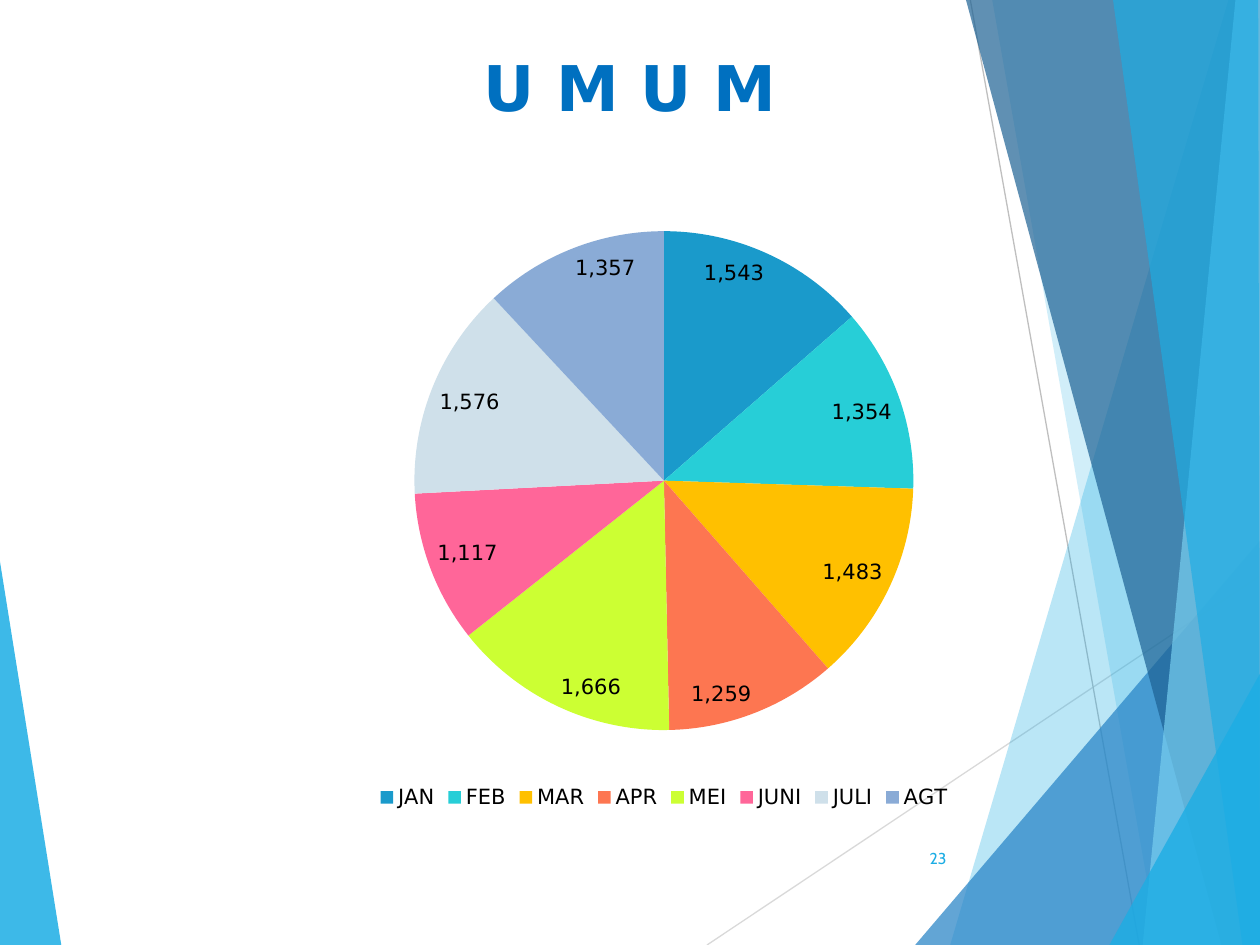
from pptx import Presentation
from pptx.chart.data import CategoryChartData
from pptx.dml.color import RGBColor
from pptx.enum.chart import XL_CHART_TYPE, XL_LABEL_POSITION, XL_LEGEND_POSITION
from pptx.enum.shapes import MSO_CONNECTOR
from pptx.enum.text import MSO_ANCHOR, PP_ALIGN
from pptx.oxml import parse_xml
from pptx.oxml.ns import nsdecls, qn
from pptx.util import Pt
from lxml import etree

WIDE, HIGH = 720, 540
SKY = RGBColor(0x1C, 0xAD, 0xE4)
BLUE = RGBColor(0x26, 0x83, 0xC6)
NAVY = RGBColor(0x1D, 0x62, 0x94)
PALE = RGBColor(0x77, 0xCE, 0xEF)
INK = RGBColor(0x00, 0x70, 0xC0)
BLACK = RGBColor(0, 0, 0)
GREY = RGBColor(0xBF, 0xBF, 0xBF)
SILVER = RGBColor(0xD9, 0xD9, 0xD9)
SLICES = [
    ("JAN", 1543, RGBColor(0x1A, 0x9A, 0xCB)),
    ("FEB", 1354, RGBColor(0x27, 0xCE, 0xD7)),
    ("MAR", 1483, RGBColor(0xFF, 0xC0, 0x00)),
    ("APR", 1259, RGBColor(0xFD, 0x76, 0x51)),
    ("MEI", 1666, RGBColor(0xCC, 0xFF, 0x33)),
    ("JUNI", 1117, RGBColor(0xFF, 0x66, 0x99)),
    ("JULI", 1576, RGBColor(0xCF, 0xE0, 0xEA)),
    ("AGT", 1357, RGBColor(0x8A, 0xAB, 0xD6)),
]


def style(font, name, size, color, bold=False):
    font.name, font.size, font.bold = name, Pt(size), bold
    font.color.rgb = color


deck = Presentation()
deck.slide_width, deck.slide_height = Pt(WIDE), Pt(HIGH)
slide = deck.slides.add_slide(deck.slide_layouts[5])
shapes = slide.shapes

# Thin lines behind the shards
for ends, color in [((404, HIGH, WIDE, 329), SILVER), ((554.5, 0, 651, HIGH), GREY)]:
    line = shapes.add_connector(MSO_CONNECTOR.STRAIGHT, *[Pt(n) for n in ends])
    line.line.color.rgb = color
    line.line.width = Pt(0.75)
    etree.SubElement(line._element.spPr, qn("a:effectLst"))

# Translucent shards: corners, colour, opacity in percent
shards = [
    ([(0, 321), (35, HIGH), (0, HIGH)], SKY, 85),
    ([(702, 0), (543, HIGH), (WIDE, HIGH), (WIDE, 0)], SKY, 30),
    ([(567, 0), (662, HIGH), (WIDE, HIGH), (WIDE, 0)], SKY, 20),
    ([(523, HIGH), (WIDE, 309), (WIDE, HIGH)], BLUE, 72),
    ([(552, 0), (698, HIGH), (WIDE, HIGH), (WIDE, 0)], NAVY, 70),
    ([(706, 0), (653, HIGH), (WIDE, HIGH), (WIDE, 0)], PALE, 70),
    ([(636, 0), (710, HIGH), (WIDE, HIGH), (719, 0)], SKY, 65),
    ([(634, HIGH), (WIDE, 385), (WIDE, HIGH)], SKY, 80),
]
for points, color, alpha in shards:
    path = shapes.build_freeform(*points[0], scale=Pt(1))
    path.add_line_segments(points[1:], close=True)
    shard = path.convert_to_shape()
    shard.shadow.inherit = False
    shard.line.fill.background()
    shard.fill.solid()
    shard.fill.fore_color.rgb = color
    tint = shard._element.spPr.find(f".//{qn('a:srgbClr')}")
    etree.SubElement(tint, qn("a:alpha"), val=str(alpha * 1000))

# Title
title = shapes.title
title.left, title.top, title.width, title.height = Pt(36), Pt(21.6), Pt(648), Pt(90)
frame = title.text_frame
frame.vertical_anchor = MSO_ANCHOR.TOP
frame.margin_top = Pt(6)
para = frame.paragraphs[0]
para.alignment = PP_ALIGN.CENTER
run = para.add_run()
run.text = "U M U M"
style(run.font, "DejaVu Sans", 36, INK, True)

# Pie chart
data = CategoryChartData(number_format="#,##0")
data.categories = [name for name, _, _ in SLICES]
data.add_series("Series 1", [value for _, value, _ in SLICES])
chart = shapes.add_chart(
    XL_CHART_TYPE.PIE, Pt(55.4), Pt(108.7), Pt(648), Pt(357), data
).chart
style(chart.font, "Cabin", 18, BLACK)
chart.has_title = False
chart.has_legend = True
chart.legend.position = XL_LEGEND_POSITION.BOTTOM
chart.legend.include_in_layout = False
style(chart.legend.font, "DejaVu Sans", 12, BLACK)

plot = chart.plots[0]
plot.vary_by_categories = True
for index, (_, _, color) in enumerate(SLICES):
    fill = plot.series[0].points[index].format.fill
    fill.solid()
    fill.fore_color.rgb = color
plot.has_data_labels = True
labels = plot.data_labels
labels.show_value = True
labels.show_percentage = False
labels.number_format, labels.number_format_is_linked = "#,##0", False
labels.position = XL_LABEL_POSITION.INSIDE_END
style(labels.font, "DejaVu Sans", 12, BLACK)

area = chart._chartSpace.find(f".//{qn('c:plotArea')}")
for old in area.findall(qn("c:layout")):
    area.remove(old)
area.insert(0, parse_xml(
    f'<c:layout {nsdecls("c")}><c:manualLayout><c:layoutTarget val="inner"/>'
    '<c:xMode val="edge"/><c:yMode val="edge"/><c:x val="0.28"/><c:y val="0.065"/>'
    '<c:w val="0.44"/><c:h val="0.8"/></c:manualLayout></c:layout>'
))

# Page number
box = shapes.add_textbox(Pt(507.6), Pt(476), Pt(40.3), Pt(28.8))
frame = box.text_frame
frame.word_wrap = True
frame.vertical_anchor = MSO_ANCHOR.MIDDLE
para = frame.paragraphs[0]
para.alignment = PP_ALIGN.RIGHT
run = para.add_run()
run.text = "23"
style(run.font, "Cabin", 9, SKY)

deck.save("out.pptx")
